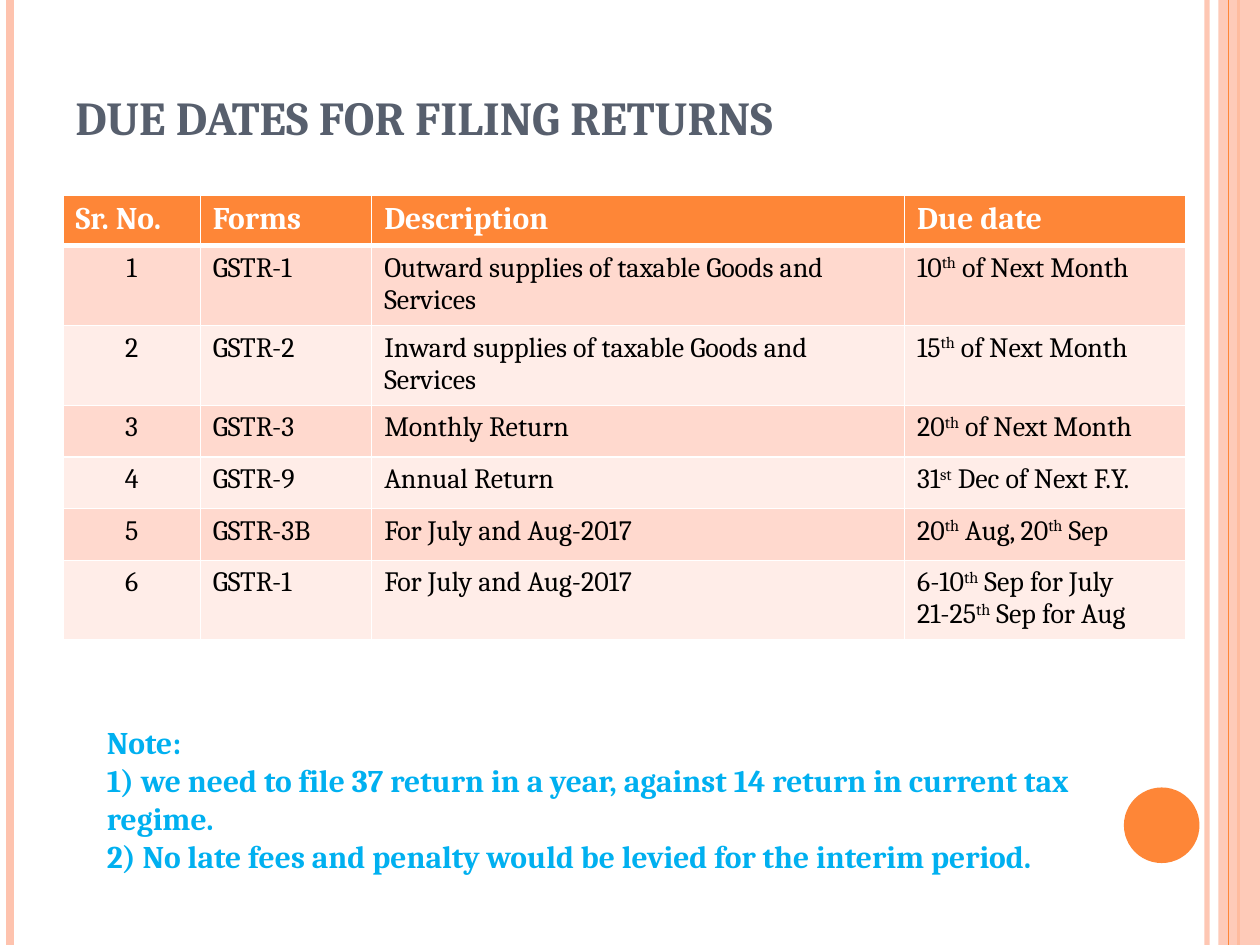
from lxml.etree import SubElement
from pptx import Presentation
from pptx.dml.color import RGBColor
from pptx.enum.shapes import MSO_CONNECTOR, MSO_SHAPE
from pptx.enum.text import MSO_ANCHOR, PP_ALIGN
from pptx.oxml.ns import qn
from pptx.util import Inches, Pt

WIDTH, HEIGHT = 10, 7.5
FONT = "Cambria"
ORANGE = RGBColor(0xFE, 0x86, 0x37)
PEACH = RGBColor(0xFE, 0xC3, 0xAE)
BANDS = RGBColor(0xFF, 0xED, 0xE8), RGBColor(0xFF, 0xD9, 0xCE)
SLATE = RGBColor(0x57, 0x5F, 0x6D)
BLUE = RGBColor(0x00, 0xB0, 0xF0)
WHITE = RGBColor(0xFF, 0xFF, 0xFF)
BLACK = RGBColor(0, 0, 0)

TITLE = {"size": Pt(27), "bold": True, "color": SLATE}
HEADER = {"size": Pt(18), "bold": True, "color": WHITE}
BODY = {"size": Pt(16), "bold": False, "color": BLACK}
NOTE = {"size": Pt(18), "bold": True, "color": BLUE}

COLUMNS = 1.09, 1.36, 4.23, 2.23
ROWS = [0.37] + [0.41] * 6
# Text between carets is superscript
RETURNS = [
    ("Sr. No.", "Forms", "Description", "Due date"),
    ("1", "GSTR-1", "Outward supplies of taxable Goods and Services", "10^th^ of Next Month"),
    ("2", "GSTR-2", "Inward supplies of taxable Goods and Services", "15^th^ of Next Month"),
    ("3", "GSTR-3", "Monthly Return", "20^th^ of Next Month"),
    ("4", "GSTR-9", "Annual Return", "31^st^ Dec of Next F.Y."),
    ("5", "GSTR-3B", "For July and Aug-2017", "20^th^ Aug, 20^th^ Sep"),
    ("6", "GSTR-1", "For July and Aug-2017", "6-10^th^ Sep for July\n21-25^th^ Sep for Aug"),
]
NOTES = """Note:
1) we need to file 37 return in a year, against 14 return in current tax regime.
2) No late fees and penalty would be levied for the interim period."""


def set_alpha(fill_parent, percent):
    color = next(fill_parent.iter(qn("a:srgbClr")))
    SubElement(color, qn("a:alpha")).set("val", str(percent * 1000))


def add_stripe(slide, x, color, width, alpha=100):
    """Draw a vertical line over the full slide height."""
    line = slide.shapes.add_connector(
        MSO_CONNECTOR.STRAIGHT, Inches(x), 0, Inches(x), Inches(HEIGHT))
    line.line.color.rgb = color
    line.line.width = Pt(width)
    if alpha < 100:
        set_alpha(line.line._get_or_add_ln(), alpha)
    SubElement(line._element.spPr, qn("a:effectLst"))


def add_filled(slide, kind, box, color, alpha=100):
    sp = slide.shapes.add_shape(kind, *map(Inches, box))
    sp.shadow.inherit = False
    sp.fill.solid()
    sp.fill.fore_color.rgb = color
    sp.line.fill.background()
    if alpha < 100:
        set_alpha(sp._element.spPr.find(qn("a:solidFill")), alpha)


def write(tf, text, style, align=PP_ALIGN.LEFT):
    """Fill a text frame, one paragraph a line, with ^superscript^ parts."""
    for i, line in enumerate(text.split("\n")):
        p = tf.add_paragraph() if i else tf.paragraphs[0]
        p.alignment = align
        for j, part in enumerate(line.split("^")):
            r = p.add_run()
            r.text = part
            r.font.name = FONT
            for name, value in style.items():
                if name == "color":
                    r.font.color.rgb = value
                else:
                    setattr(r.font, name, value)
            if j % 2:
                r.font._element.set("baseline", "30000")


def add_text(slide, box, text, style, anchor=MSO_ANCHOR.TOP):
    tf = slide.shapes.add_textbox(*map(Inches, box)).text_frame
    tf.word_wrap = True
    tf.vertical_anchor = anchor
    write(tf, text, style)


def add_borders(cell, bottom):
    tc_pr = cell._tc.get_or_add_tcPr()
    for side, width in {"L": 1, "R": 1, "T": 1, "B": bottom}.items():
        ln = SubElement(tc_pr, qn(f"a:ln{side}"), w=str(Pt(width)))
        fill = SubElement(ln, qn("a:solidFill"))
        SubElement(fill, qn("a:srgbClr"), val=str(WHITE))


def add_returns_table(slide, left, top):
    table = slide.shapes.add_table(
        len(ROWS), len(COLUMNS), Inches(left), Inches(top),
        Inches(sum(COLUMNS)), Inches(sum(ROWS))).table
    for column, width in zip(table.columns, COLUMNS):
        column.width = Inches(width)
    for i, (row, height, values) in enumerate(zip(table.rows, ROWS, RETURNS)):
        row.height = Inches(height)
        for j, (cell, value) in enumerate(zip(row.cells, values)):
            # The rule under the header is heavier, on both sides of the edge
            add_borders(cell, 1 if i else 3)
            cell.fill.solid()
            cell.fill.fore_color.rgb = BANDS[i % 2] if i else ORANGE
            centred = i > 0 and j == 0
            write(cell.text_frame, value, BODY if i else HEADER,
                  PP_ALIGN.CENTER if centred else PP_ALIGN.LEFT)


def add_frame(slide):
    """Draw the stripes at the slide's edges and the orange dot."""
    add_stripe(slide, 9.58, PEACH, 3, 93)
    add_stripe(slide, 0.08, PEACH, 4.5)
    add_stripe(slide, 9.83, ORANGE, 1.5)
    add_filled(slide, MSO_SHAPE.RECTANGLE, (9.67, 0, 0.33, HEIGHT), PEACH, 87)
    add_stripe(slide, 9.75, ORANGE, 0.75)
    add_filled(slide, MSO_SHAPE.OVAL, (8.92, 6.25, 0.6, 0.6), ORANGE)


def main():
    prs = Presentation()
    prs.slide_width, prs.slide_height = Inches(WIDTH), Inches(HEIGHT)
    slide = prs.slides.add_slide(prs.slide_layouts[6])
    add_frame(slide)
    add_text(slide, (0.5, 0.75, 8.17, 0.45), "DUE DATES FOR FILING RETURNS",
             TITLE, MSO_ANCHOR.BOTTOM)
    add_returns_table(slide, 0.5, 1.55)
    add_text(slide, (0.75, 5.69, 8.5, 1.62), NOTES, NOTE)
    prs.save("out.pptx")


if __name__ == "__main__":
    main()
